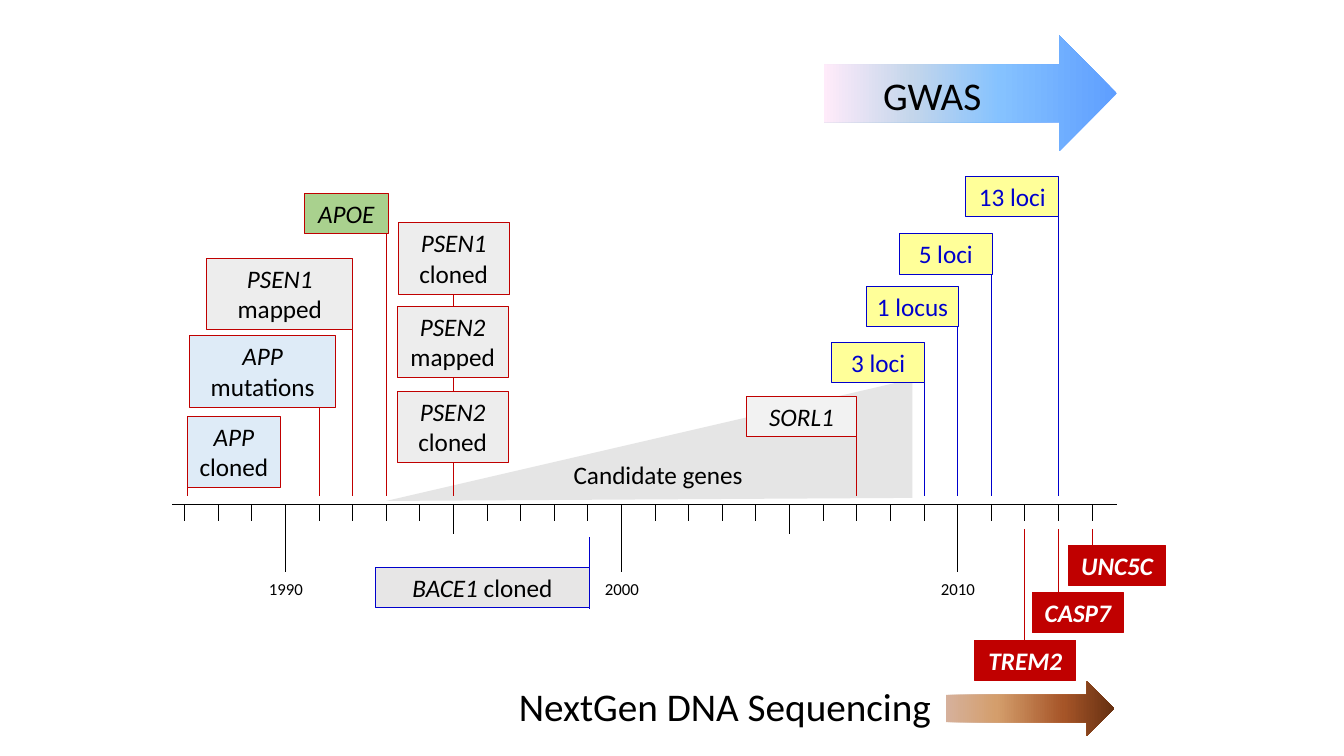
from lxml.etree import SubElement
from pptx import Presentation
from pptx.dml.color import RGBColor
from pptx.enum.shapes import MSO_CONNECTOR, MSO_SHAPE
from pptx.enum.text import MSO_ANCHOR, MSO_AUTO_SIZE, PP_ALIGN
from pptx.oxml.ns import qn
from pptx.util import Inches, Pt

BLACK = RGBColor(0x00, 0x00, 0x00)
WHITE = RGBColor(0xFF, 0xFF, 0xFF)
RED = RGBColor(0xC0, 0x00, 0x00)
BLUE = RGBColor(0x00, 0x00, 0xCC)
YELLOW = RGBColor(0xFF, 0xFF, 0x99)
GREEN = RGBColor(0xA9, 0xD1, 0x8E)
PALE_BLUE = RGBColor(0xDE, 0xEB, 0xF7)
PALE_GRAY = RGBColor(0xED, 0xED, 0xED)
LIGHT_GRAY = RGBColor(0xF2, 0xF2, 0xF2)
WARM_GRAY = RGBColor(0xE7, 0xE6, 0xE6)
WEDGE_GRAY = RGBColor(0xE5, 0xE5, 0xE5)

AXIS_TOP = 5
STEM_BOTTOM = 4.92

GWAS_STOPS = [(0, "5E9EFF"), (40, "85C2FF"), (70, "C4D6EB"), (100, "FFEBFA")]
SEQUENCING_STOPS = [(0, "D6B19C"), (30, "D49E6C"), (70, "A65528"), (100, "663012")]

STEMS = [
    (1987.1, 4.58, STEM_BOTTOM, RED),
    (1991, 3.33, STEM_BOTTOM, RED),
    (1992, 2.58, STEM_BOTTOM, RED),
    (1993, 2.17, STEM_BOTTOM, RED),
    (1995, 2.5, STEM_BOTTOM, RED),
    (2007, 3.94, STEM_BOTTOM, RED),
    (2009, 3.69, STEM_BOTTOM, BLUE),
    (2010, 2.92, STEM_BOTTOM, BLUE),
    (2011, 2.72, STEM_BOTTOM, BLUE),
    (2013, 2, STEM_BOTTOM, BLUE),
    (1999.05, 5.33, 6.04, BLUE),
    (2012, 5.25, 6.36, RED),
    (2013, 5.25, 5.93, RED),
    (2014, 5.25, 5.5, RED),
]

GENE_BOXES = [
    ("PSEN2", " cloned", (3.94, 3.88, 1.1, 0.71), PALE_GRAY, RED),
    ("PSEN2", " mapped", (3.94, 3.04, 1.1, 0.71), PALE_GRAY, RED),
    ("PSEN1", " cloned", (3.95, 2.21, 1.1, 0.71), PALE_GRAY, RED),
    ("PSEN1", " mapped", (2.05, 2.56, 1.45, 0.71), PALE_GRAY, RED),
    ("APP", " mutations", (1.88, 3.33, 1.45, 0.71), PALE_BLUE, RED),
    ("APP", " cloned", (1.86, 4.13, 0.92, 0.71), PALE_BLUE, RED),
    ("APOE", "", (3.02, 1.92, 0.83, 0.4), GREEN, RED),
    ("SORL1", "", (7.4, 3.93, 1.1, 0.4), LIGHT_GRAY, RED),
    ("BACE1", " cloned", (3.72, 5.63, 2.13, 0.4), WARM_GRAY, BLUE),
]

LOCUS_BOXES = [
    ("3 loci", 8.25, 3.4),
    ("1 locus", 8.59, 2.84),
    ("5 loci", 8.92, 2.32),
    ("13 loci", 9.58, 1.75),
]

SEQUENCED_BOXES = [
    ("TREM2", 9.67, 6.35, 1),
    ("CASP7", 10.24, 5.88, 0.9),
    ("UNC5C", 10.6, 5.41, 0.96),
]


def year_position(year):
    """Return the horizontal place of a year in inches."""
    return 2.83 + (year - 1990) / 3


def add_text(paragraph, text, size=18, color=BLACK, bold=False, italic=False):
    """Append one formatted run to a paragraph."""
    run = paragraph.add_run()
    run.text = text
    run.font.name = "Calibri"
    run.font.size = Pt(size)
    run.font.color.rgb = color
    run.font.bold = bold
    run.font.italic = italic


class TimelineSlide:
    """Hold the slide and draw its elements in one style."""

    def __init__(self, slide):
        """Keep the slide that is drawn on."""
        self.shapes = slide.shapes

    def line(self, start, end, color):
        """Draw a thin straight line."""
        connector = self.shapes.add_connector(
            MSO_CONNECTOR.STRAIGHT, *(Inches(value) for value in start + end))
        connector.line.color.rgb = color
        connector.line.width = Pt(0.5)
        SubElement(connector._element.spPr, qn("a:effectLst"))

    def prepare(self, shape, alignment):
        """Set up the text frame of a shape and return its paragraph."""
        frame = shape.text_frame
        frame.word_wrap = True
        frame.auto_size = MSO_AUTO_SIZE.SHAPE_TO_FIT_TEXT
        frame.vertical_anchor = MSO_ANCHOR.TOP
        frame.paragraphs[0].alignment = alignment
        return frame.paragraphs[0]

    def label(self, text, bounds, size, alignment=PP_ALIGN.CENTER):
        """Draw text without a box."""
        shape = self.shapes.add_textbox(*(Inches(value) for value in bounds))
        add_text(self.prepare(shape, alignment), text, size=size)

    def box(self, bounds, fill, outline):
        """Draw a filled rectangle and return its paragraph."""
        shape = self.shapes.add_shape(
            MSO_SHAPE.RECTANGLE, *(Inches(value) for value in bounds))
        shape.shadow.inherit = False
        shape.fill.solid()
        shape.fill.fore_color.rgb = fill
        shape.line.color.rgb = outline
        shape.line.width = Pt(0.75)
        return self.prepare(shape, PP_ALIGN.CENTER)

    def arrow(self, bounds, stops, angle):
        """Draw a right arrow with a gradient."""
        shape = self.shapes.add_shape(
            MSO_SHAPE.RIGHT_ARROW, *(Inches(value) for value in bounds))
        shape.shadow.inherit = False
        shape.line.fill.background()
        shape.fill.gradient()
        shape.fill.gradient_angle = angle
        stop_list = shape._element.spPr.find(qn("a:gradFill")).find(qn("a:gsLst"))
        for old_stop in list(stop_list):
            stop_list.remove(old_stop)
        for percent, color in stops:
            stop = SubElement(stop_list, qn("a:gs"), pos=str(percent * 1000))
            SubElement(stop, qn("a:srgbClr"), val=color)

    def wedge(self, points, color):
        """Draw a filled polygon without an outline."""
        corners = [(Inches(x), Inches(y)) for x, y in points]
        builder = self.shapes.build_freeform(*corners[0], scale=1.0)
        builder.add_line_segments(corners[1:], close=True)
        shape = builder.convert_to_shape()
        shape.shadow.inherit = False
        shape.fill.solid()
        shape.fill.fore_color.rgb = color
        shape.line.fill.background()

    def axis(self):
        """Draw the time axis with its ticks and decade labels."""
        self.line((1.71, AXIS_TOP), (11.08, AXIS_TOP), BLACK)
        for year in range(1987, 2015):
            x = year_position(year)
            length = 0.67 if year % 10 == 0 else 0.3 if year % 5 == 0 else 0.17
            self.line((x, AXIS_TOP), (x, AXIS_TOP + length), BLACK)
            if year % 10 == 0:
                self.label(str(year), (x - 0.33, 5.69, 0.67, 0.3), 12)


def main():
    """Build the gene discovery timeline."""
    presentation = Presentation()
    presentation.slide_width = Inches(13.33)
    presentation.slide_height = Inches(7.5)
    timeline = TimelineSlide(
        presentation.slides.add_slide(presentation.slide_layouts[6]))

    timeline.wedge([(3.83, 4.97), (9.05, 3.76), (9.05, 4.94)], WEDGE_GRAY)
    timeline.label("Candidate genes", (5.59, 4.51, 2.12, 0.4), 18, PP_ALIGN.LEFT)
    timeline.axis()
    for year, top, bottom, color in STEMS:
        x = year_position(year)
        timeline.line((x, top), (x, bottom), color)

    for gene, event, bounds, fill, outline in GENE_BOXES:
        paragraph = timeline.box(bounds, fill, outline)
        add_text(paragraph, gene, italic=True)
        if event:
            add_text(paragraph, event)
    for text, left, top in LOCUS_BOXES:
        add_text(timeline.box((left, top, 0.92, 0.4), YELLOW, BLUE), text, color=BLUE)
    for gene, left, top, width in SEQUENCED_BOXES:
        paragraph = timeline.box((left, top, width, 0.4), RED, RED)
        add_text(paragraph, gene, color=WHITE, bold=True, italic=True)

    timeline.arrow((8.17, 0.35, 2.91, 1.15), GWAS_STOPS, 180)
    timeline.label("GWAS", (8.66, 0.66, 1.89, 0.57), 28, PP_ALIGN.LEFT)
    timeline.label("NextGen DNA Sequencing", (4.5, 6.72, 5.38, 0.57), 28)
    timeline.arrow((9.38, 6.76, 1.67, 0.54), SEQUENCING_STOPS, 0)
    presentation.save("out.pptx")


if __name__ == "__main__":
    main()
